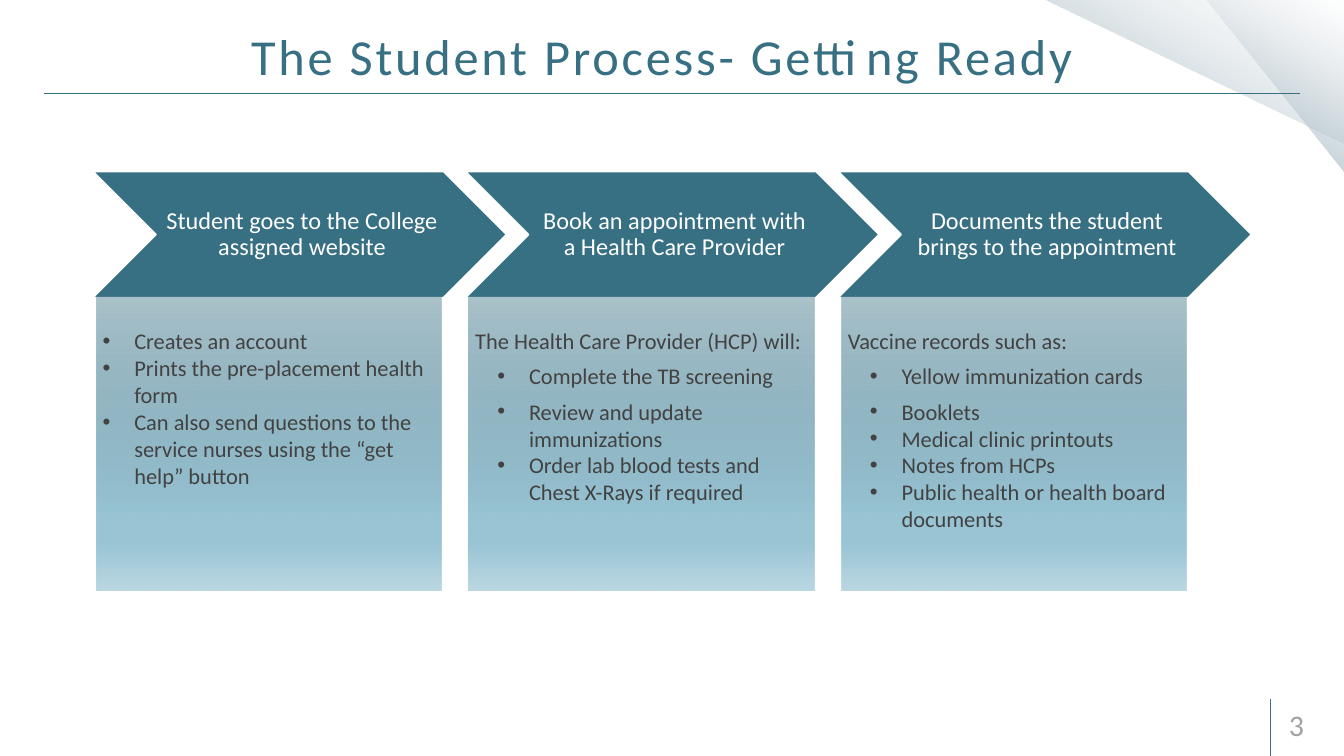
from pptx import Presentation
from pptx.dml.color import RGBColor
from pptx.enum.shapes import MSO_CONNECTOR, MSO_SHAPE
from pptx.enum.text import MSO_ANCHOR, PP_ALIGN
from pptx.oxml.ns import qn
from pptx.util import Inches, Pt
from lxml import etree

STRAIGHT = MSO_CONNECTOR.STRAIGHT
CHEVRON = MSO_SHAPE.CHEVRON
RECTANGLE = MSO_SHAPE.RECTANGLE
TRIANGLE = MSO_SHAPE.RIGHT_TRIANGLE
TOP, MIDDLE = MSO_ANCHOR.TOP, MSO_ANCHOR.MIDDLE
LEFT, CENTER = PP_ALIGN.LEFT, PP_ALIGN.CENTER

TEAL, WHITE, INK, GREY = "376F83", "FFFFFF", "424242", "A2A2A2"
CORNER_STOPS = [(0, "9DB4C0", 100), (50, "B3C3CC", 44), (100, "E2E8EB", 0)]
PANEL_STOPS = [(0, TEAL, 42), (74, "98C4D4", 100), (83, "98C4D4", 100), (100, "BBD8E2", 100)]
STEP_PITCH = 27.72
HANGING = 2.35

STEPS = [
    ("Student goes to the College assigned website", [
        ("Creates an account", HANGING, 0),
        ("Prints the pre-placement health form", HANGING, 0),
        ("Can also send questions to the service nurses using the “get help” button", HANGING, 0),
    ]),
    ("Book an appointment with a Health Care Provider", [
        ("The Health Care Provider (HCP) will:", 0, 9),
        ("Complete the TB screening", 4, 9),
        ("Review and update immunizations", 4, 0),
        ("Order lab blood tests and Chest X-Rays if required", 4, 0),
    ]),
    ("Documents the student brings to the appointment", [
        ("Vaccine records such as:", 0, 9),
        ("Yellow immunization cards", 4, 9),
        ("Booklets", 4, 0),
        ("Medical clinic printouts", 4, 0),
        ("Notes from HCPs", 4, 0),
        ("Public health or health board documents", 4, 0),
    ]),
]


def color(value):
    return RGBColor.from_string(value)


class SlideBuilder:
    font = "Calibri"

    def __init__(self, deck):
        self.column = deck.slide_width / 100
        self.row = deck.slide_height / 100
        self.slide = deck.slides.add_slide(deck.slide_layouts[6])

    def across(self, columns):
        return round(columns * self.column)

    def area(self, left, top, width, height):
        return (self.across(left), round(top * self.row),
                self.across(width), round(height * self.row))

    def shape(self, kind, area, fill=None, outline=None):
        shape = self.slide.shapes.add_shape(kind, *self.area(*area))
        shape.shadow.inherit = False
        if fill:
            shape.fill.solid()
            shape.fill.fore_color.rgb = color(fill)
        if outline:
            shape.line.color.rgb = color(outline)
            shape.line.width = Pt(2)
        else:
            shape.line.fill.background()
        return shape

    def gradient(self, kind, area, stops, angle):
        shape = self.shape(kind, area)
        shape.fill.gradient()
        shape.fill.gradient_angle = 360 - angle
        stop_list = shape._element.spPr.find(".//" + qn("a:gsLst"))
        for stop in list(stop_list):
            stop_list.remove(stop)
        for position, value, opacity in stops:
            stop = etree.SubElement(stop_list, qn("a:gs"), pos=str(position * 1000))
            tint = etree.SubElement(stop, qn("a:srgbClr"), val=value)
            if opacity < 100:
                etree.SubElement(tint, qn("a:alpha"), val=str(opacity * 1000))
        return shape

    def line(self, left, top, right, bottom):
        line = self.slide.shapes.add_connector(
            STRAIGHT, *self.area(left, top, right, bottom))
        line.line.color.rgb = color(TEAL)
        line.line.width = Pt(1)
        etree.SubElement(line._element.spPr, qn("a:effectLst"))

    def frame(self, shape, insets, anchor):
        frame = shape.text_frame
        frame.word_wrap = True
        frame.vertical_anchor = anchor
        (frame.margin_left, frame.margin_top,
         frame.margin_right, frame.margin_bottom) = map(Inches, insets)
        return frame

    def fill_para(self, para, text, size, ink, align=LEFT):
        para.text = text
        para.alignment = align
        for span in para.runs:
            span.font.name = self.font
            span.font.size = Pt(size)
            span.font.color.rgb = color(ink)

    def text(self, area, text, size, ink, align, insets=(0.18, 0.09, 0.18, 0.09)):
        box = self.slide.shapes.add_textbox(*self.area(*area))
        para = self.frame(box, insets, MIDDLE).paragraphs[0]
        self.fill_para(para, text, size, ink, align)
        return para

    def panel(self, area, items):
        panel = self.gradient(RECTANGLE, area, PANEL_STOPS, 90)
        frame = self.frame(panel, (0.1, 0.45, 0.1, 0.05), TOP)
        for index, (text, indent, gap) in enumerate(items):
            para = frame.add_paragraph() if index else frame.paragraphs[0]
            self.fill_para(para, text, 24, INK)
            para.space_after = Pt(gap)
            if indent:
                properties = para._p.get_or_add_pPr()
                properties.set("marL", str(self.across(indent)))
                properties.set("indent", str(-self.across(HANGING)))
                etree.SubElement(properties, qn("a:buFont"), typeface="Arial")
                etree.SubElement(properties, qn("a:buChar"), char="•")

    def step(self, index, heading, items):
        shift = index * STEP_PITCH
        self.shape(CHEVRON, (6.9 + shift, 22.67, 30.8, 16.71), TEAL, WHITE)
        label = self.text((11.6 + shift, 22.67, 21.4, 16.71), heading, 26, WHITE,
                          CENTER, (0.11, 0.04, 0.04, 0.04))
        label.line_spacing = 0.9
        self.panel((7.15 + shift, 39.29, 25.7, 38.76), items)


def main():
    deck = Presentation()
    deck.slide_width, deck.slide_height = Inches(20), Inches(11.25)
    page = SlideBuilder(deck)

    for corner in [(89.8, 0, 10.2, 22.84), (77.7, 0, 22.3, 18.93)]:
        page.gradient(TRIANGLE, corner, CORNER_STOPS, 120).rotation = 180
    page.line(3.3, 12.36, 96.7, 12.36)
    page.line(94.55, 100, 94.55, 92.44)

    title = page.text((3.5, 1.87, 91.55, 10.93), "The Student Process- Getting Ready",
                      54, TEAL, CENTER)
    title.runs[0].font._element.set("spc", "300")
    page.text((95, 93.24, 4.95, 5.33), "3", 32, GREY, LEFT)

    for index, (heading, items) in enumerate(STEPS):
        page.step(index, heading, items)

    deck.save("out.pptx")


if __name__ == "__main__":
    main()
